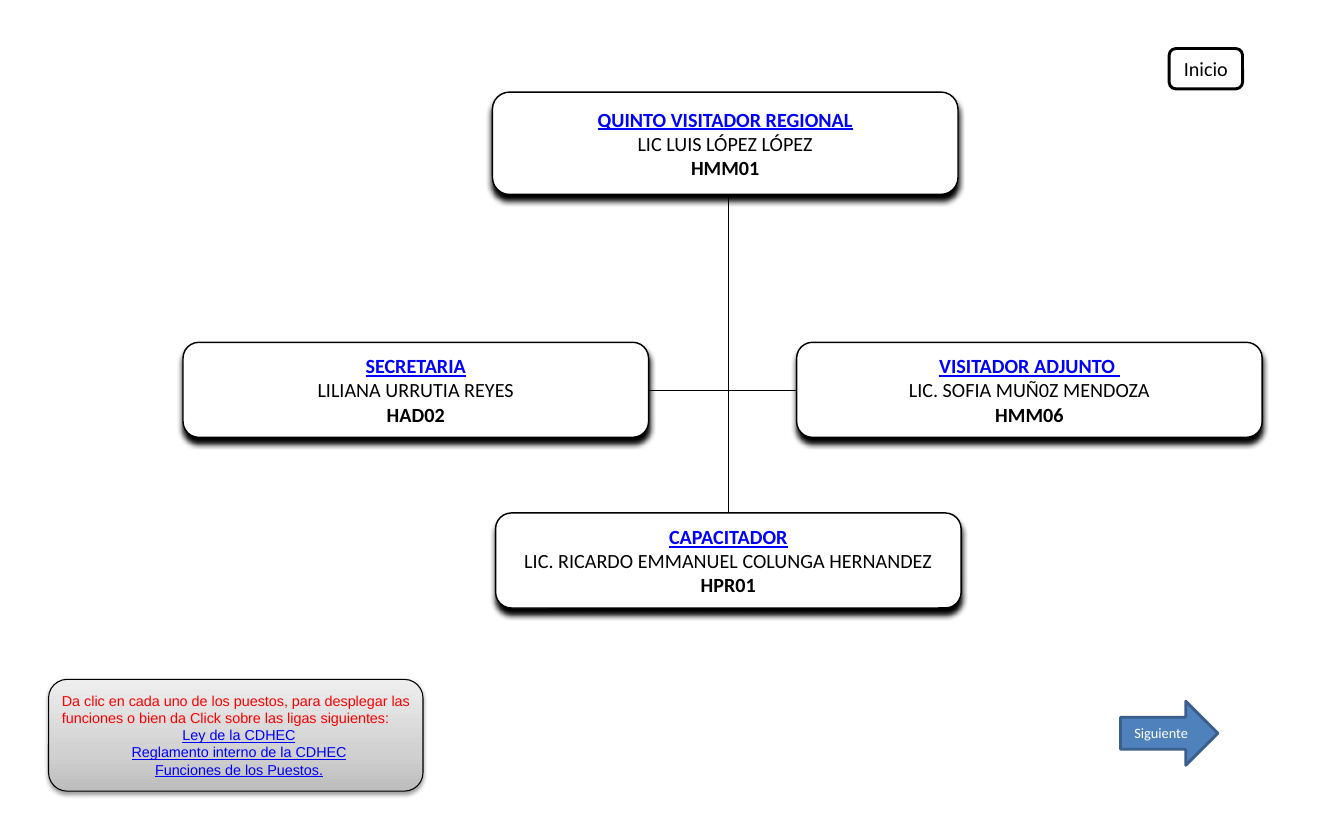
from copy import deepcopy

from lxml import etree
from pptx import Presentation
from pptx.dml.color import RGBColor
from pptx.enum.shapes import MSO_CONNECTOR, MSO_SHAPE
from pptx.enum.text import MSO_ANCHOR, PP_ALIGN
from pptx.oxml.ns import qn
from pptx.util import Pt

ROUNDED = MSO_SHAPE.ROUNDED_RECTANGLE
ARROW = MSO_SHAPE.RIGHT_ARROW
STRAIGHT = MSO_CONNECTOR.STRAIGHT
LEFT, CENTER = PP_ALIGN.LEFT, PP_ALIGN.CENTER
MIDDLE = MSO_ANCHOR.MIDDLE

BLACK, WHITE, RED, LINK = "000000", "FFFFFF", "FF0000", "0000FF"
ARROW_FILL, ARROW_LINE = "4F81BD", "3A5F8C"
PANEL_STOPS = [(0, "BDBDBD"), (0.35, "D1D1D1"), (1, "EEEEEE")]

POST_WIDTH = 324
POSTS = [
    (342.7, 64.1, 71.3, "QUINTO VISITADOR REGIONAL", "LIC LUIS LÓPEZ LÓPEZ", "HMM01"),
    (127.4, 238.3, 66.2, "SECRETARIA", "LILIANA URRUTIA REYES", "HAD02"),
    (554.4, 238.3, 66.2, "VISITADOR ADJUNTO ", "LIC. SOFIA MUÑ0Z MENDOZA", "HMM06"),
    (344.9, 357.1, 66.2, "CAPACITADOR", "LIC. RICARDO EMMANUEL COLUNGA HERNANDEZ", "HPR01"),
]
HELP = (
    "Da clic en cada uno de los puestos, para desplegar las funciones "
    "o bien da Click sobre las ligas siguientes:"
)
LINKS = ["Ley de la CDHEC", "Reglamento interno de la CDHEC", "Funciones de los Puestos."]


def rgb(value):
    return RGBColor.from_string(value)


class OrgChart:
    font = "Calibri"

    def __init__(self, prs):
        self.s = prs.slides.add_slide(prs.slide_layouts[6])

    def line(self, x1, y1, x2, y2):
        c = self.s.shapes.add_connector(STRAIGHT, Pt(x1), Pt(y1), Pt(x2), Pt(y2))
        c.line.color.rgb = rgb(BLACK)
        c.line.width = Pt(0.75)
        etree.SubElement(c._element.spPr, qn("a:effectLst"))

    def shape(self, kind, x, y, w, h, fill=WHITE, line=BLACK, weight=1.0):
        sp = self.s.shapes.add_shape(kind, Pt(x), Pt(y), Pt(w), Pt(h))
        sp.shadow.inherit = False
        sp.fill.solid()
        sp.fill.fore_color.rgb = rgb(fill)
        sp.line.color.rgb = rgb(line)
        sp.line.width = Pt(weight)
        return sp

    def shadow(self, sp, opacity, blur, distance):
        effects = sp._element.spPr.find(qn("a:effectLst"))
        outer = etree.SubElement(
            effects, qn("a:outerShdw"), blurRad=str(Pt(blur)), dist=str(Pt(distance)),
            dir="5400000", algn="ctr", rotWithShape="0",
        )
        color = etree.SubElement(outer, qn("a:srgbClr"), val=BLACK)
        etree.SubElement(color, qn("a:alpha"), val=str(opacity * 1000))

    def text(self, tf, paragraphs, size, font=font):
        for i, (text, color, bold, underline, align) in enumerate(paragraphs):
            p = tf.add_paragraph() if i else tf.paragraphs[0]
            p.text = text
            p.alignment = align
            p.font.name = font
            p.font.size = Pt(size)
            p.font.bold = bold
            p.font.underline = underline
            p.font.color.rgb = rgb(color)

    def post(self, x, y, h, title, person, code):
        sp = self.shape(ROUNDED, x, y, POST_WIDTH, h)
        self.shadow(sp, 100, 4, 4)
        tf = sp.text_frame
        tf.word_wrap = False
        tf.vertical_anchor = MIDDLE
        tf.margin_left = tf.margin_right = Pt(12.2)
        tf.margin_top = tf.margin_bottom = Pt(6.5)
        self.text(tf, [
            (title, LINK, True, True, CENTER),
            (person, BLACK, False, False, CENTER),
            (code, BLACK, True, False, CENTER),
        ], 14)

    def button(self, kind, x, y, w, h, label, size, color, fill, line):
        sp = self.shape(kind, x, y, w, h, fill, line, 2)
        sp.text_frame.vertical_anchor = MIDDLE
        self.text(sp.text_frame, [(label, color, False, False, CENTER)], size)

    def panel(self, x, y, w, h):
        sp = self.shape(ROUNDED, x, y, w, h, weight=0.75)
        self.shadow(sp, 38, 3.1, 1.6)
        sp.fill.gradient()
        sp.fill.gradient_angle = 90
        first = sp._element.spPr.find(".//" + qn("a:gs"))
        first.addnext(deepcopy(first))
        for stop, (position, color) in zip(sp.fill.gradient_stops, PANEL_STOPS):
            stop.position = position
            stop.color.rgb = rgb(color)

    def help_text(self, x, y, w, h):
        tf = self.s.shapes.add_textbox(Pt(x), Pt(y), Pt(w), Pt(h)).text_frame
        tf.word_wrap = True
        links = [(link, LINK, False, True, CENTER) for link in LINKS]
        self.text(tf, [(HELP, RED, False, False, LEFT)] + links, 10, "Arial")


def main():
    prs = Presentation()
    prs.slide_width, prs.slide_height = Pt(935.3), Pt(567.4)
    chart = OrgChart(prs)
    chart.line(507, 113.8, 507, 357.1)
    chart.line(439.9, 272.2, 568.8, 272.2)
    for post in POSTS:
        chart.post(*post)
    chart.button(ROUNDED, 813.6, 33.8, 51.1, 28.1, "Inicio", 14, BLACK, WHITE, BLACK)
    chart.panel(33.8, 473, 260.6, 77.8)
    chart.help_text(36, 478.1, 260.6, 67.7)
    chart.button(ARROW, 779.8, 488.2, 67.7, 44.6, "Siguiente", 10, WHITE, ARROW_FILL, ARROW_LINE)
    prs.save("out.pptx")


if __name__ == "__main__":
    main()
